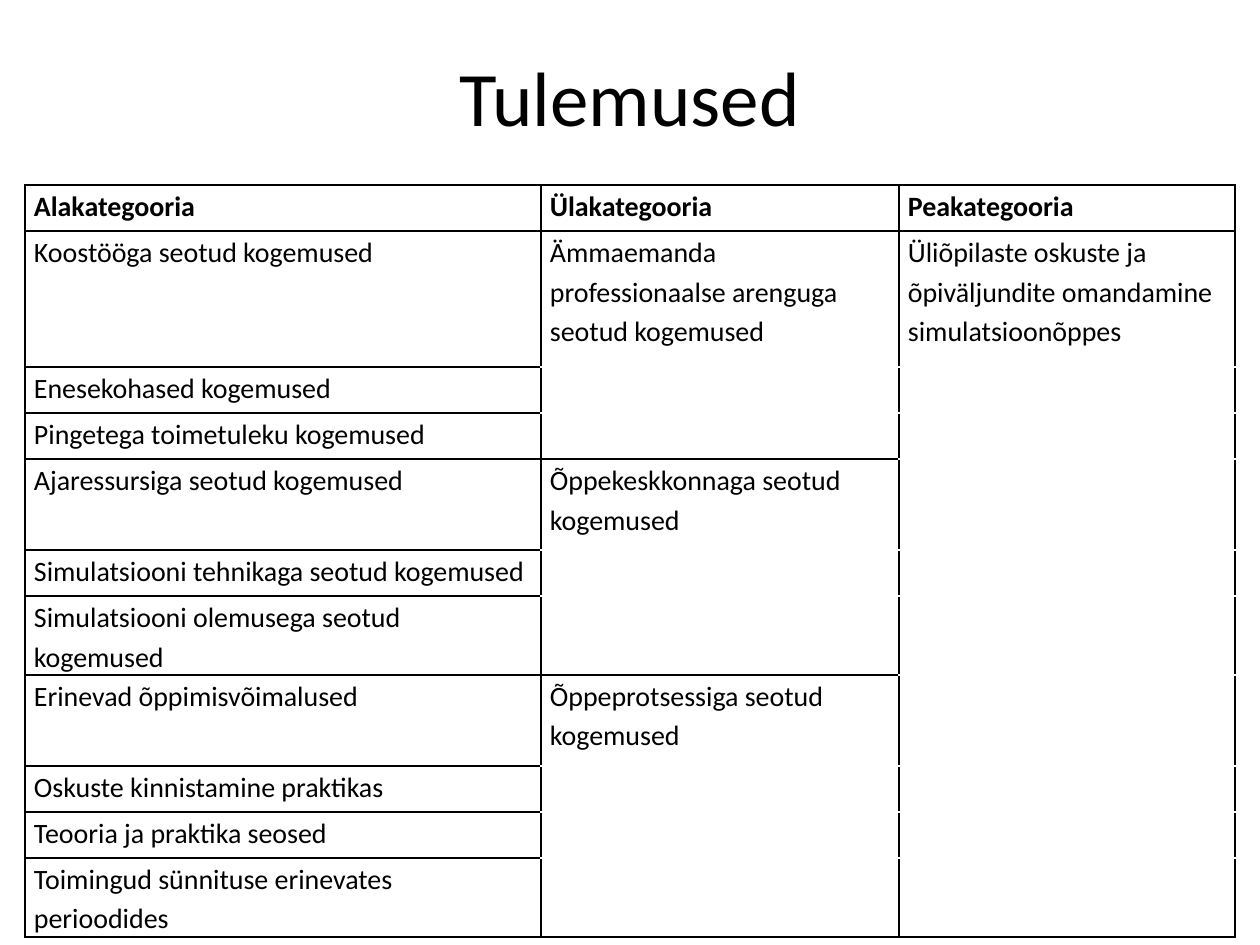
from lxml.etree import SubElement
from pptx import Presentation
from pptx.dml.color import RGBColor
from pptx.enum.text import MSO_ANCHOR, PP_ALIGN
from pptx.oxml.ns import qn
from pptx.util import Pt

# Content
TITLE = "Tulemused"
HEADINGS = ["Alakategooria", "Ülakategooria", "Peakategooria"]
MAIN_CATEGORY = "Üliõpilaste oskuste ja õpiväljundite omandamine simulatsioonõppes"
ONE_LINE, TWO_LINES, MEDIUM, TALL = 46, 79, 91, 136  # row heights in px
GROUPS = [
    ("Ämmaemanda professionaalse arenguga seotud kogemused", [
        ("Koostööga seotud kogemused", TALL),
        ("Enesekohased kogemused", ONE_LINE),
        ("Pingetega toimetuleku kogemused", ONE_LINE),
    ]),
    ("Õppekeskkonnaga seotud kogemused", [
        ("Ajaressursiga seotud kogemused", MEDIUM),
        ("Simulatsiooni tehnikaga seotud kogemused", ONE_LINE),
        ("Simulatsiooni olemusega seotud kogemused", TWO_LINES),
    ]),
    ("Õppeprotsessiga seotud kogemused", [
        ("Erinevad õppimisvõimalused", MEDIUM),
        ("Oskuste kinnistamine praktikas", ONE_LINE),
        ("Teooria ja praktika seosed", ONE_LINE),
        ("Toimingud sünnituse erinevates perioodides", TWO_LINES),
    ]),
]

# Layout
PX = 914400 // 126
SLIDE_SIZE = (1260, 945)
TITLE_BOX = (63, 16, 1134, 159)
TABLE_LEFT, TABLE_TOP = 25, 185
COLUMN_WIDTHS = [516, 358, 336]
CELL_INSET = 9
FONT = "Calibri"
BLACK = RGBColor(0, 0, 0)


def write(text_frame, text, size=16, bold=False, align=PP_ALIGN.LEFT, spacing=1.15):
    paragraph = text_frame.paragraphs[0]
    paragraph.alignment = align
    paragraph.line_spacing = spacing
    run = paragraph.add_run()
    run.text = text
    run.font.name = FONT
    run.font.size = Pt(size)
    run.font.bold = bold
    run.font.color.rgb = BLACK


def add_borders(cell, sides):
    """Draw 1 pt black lines on the given sides, before the cell's fill."""
    properties = cell._tc.get_or_add_tcPr()
    for index, side in enumerate(sides):
        line = SubElement(properties, qn(f"a:ln{side}"), w=str(Pt(1)))
        fill = SubElement(line, qn("a:solidFill"))
        SubElement(fill, qn("a:srgbClr"), val=str(BLACK))
        properties.insert(index, line)


def fill_block(table, column, first, last, text, bold=False):
    """Frame the cells from row first to row last, with text in the top one."""
    for row in range(first, last + 1):
        cell = table.cell(row, column)
        cell.margin_left = cell.margin_right = CELL_INSET * PX
        cell.margin_top = cell.margin_bottom = 0
        cell.fill.background()
        top = "T" if row == first else ""
        bottom = "B" if row == last else ""
        add_borders(cell, "LR" + top + bottom)
    write(table.cell(first, column).text_frame, text, bold=bold)


def main():
    presentation = Presentation()
    presentation.slide_width, presentation.slide_height = (n * PX for n in SLIDE_SIZE)
    slide = presentation.slides.add_slide(presentation.slide_layouts[5])

    # Title
    title = slide.shapes.title
    title.left, title.top, title.width, title.height = (n * PX for n in TITLE_BOX)
    title.text_frame.vertical_anchor = MSO_ANCHOR.MIDDLE
    write(title.text_frame, TITLE, size=44, align=PP_ALIGN.CENTER, spacing=1)

    # Table grid
    heights = [ONE_LINE] + [height for _, items in GROUPS for _, height in items]
    table = slide.shapes.add_table(
        len(heights), len(COLUMN_WIDTHS), TABLE_LEFT * PX, TABLE_TOP * PX,
        sum(COLUMN_WIDTHS) * PX, sum(heights) * PX).table
    table.first_row = table.horz_banding = False
    for column, width in zip(table.columns, COLUMN_WIDTHS):
        column.width = width * PX
    for row, height in zip(table.rows, heights):
        row.height = height * PX

    # Headings and categories
    for column, heading in enumerate(HEADINGS):
        fill_block(table, column, 0, 0, heading, bold=True)
    first = 1
    for category, items in GROUPS:
        fill_block(table, 1, first, first + len(items) - 1, category)
        for row, (subcategory, _) in enumerate(items, first):
            fill_block(table, 0, row, row, subcategory)
        first += len(items)
    fill_block(table, 2, 1, len(heights) - 1, MAIN_CATEGORY)

    presentation.save("out.pptx")


if __name__ == "__main__":
    main()
